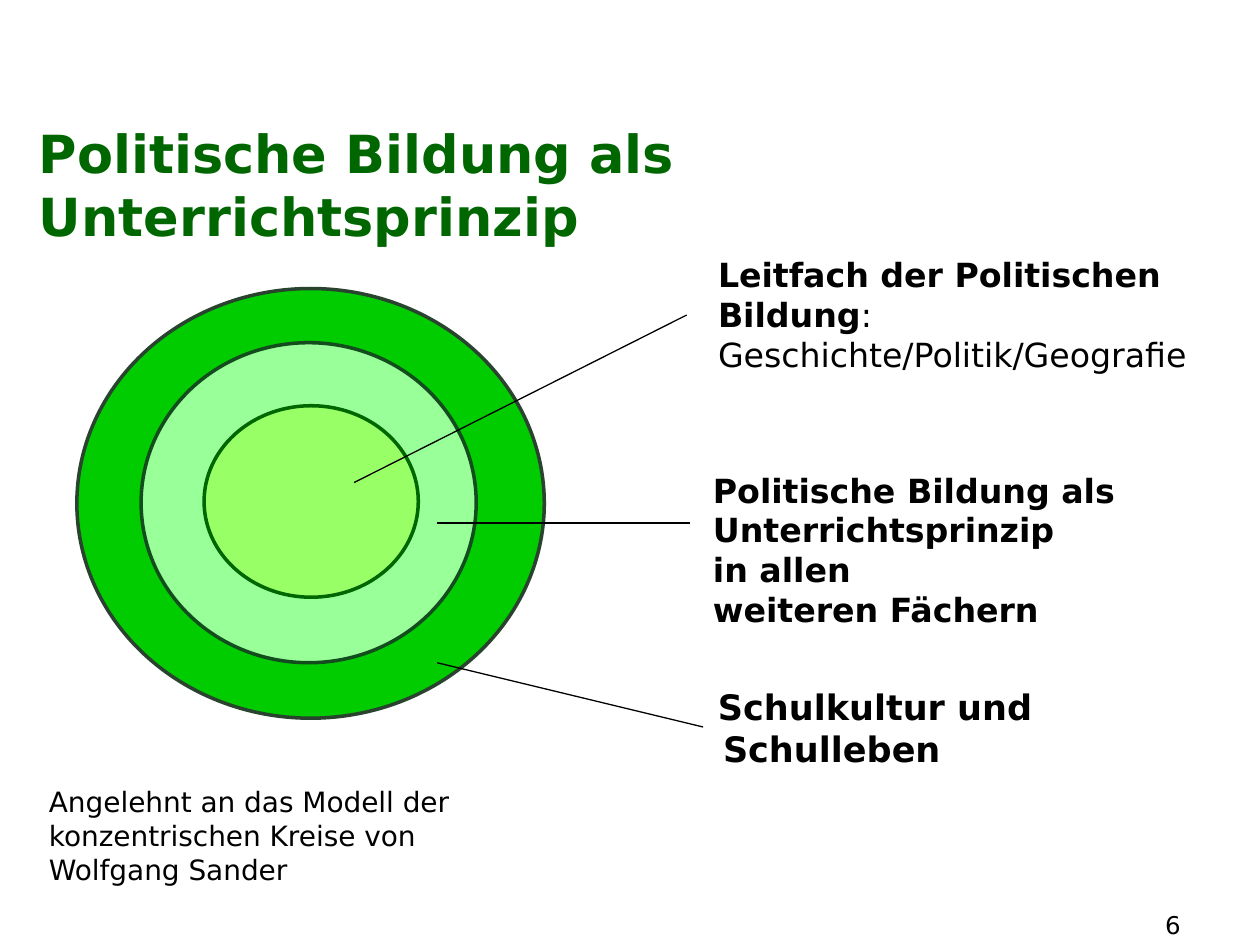
from lxml import etree
from pptx import Presentation
from pptx import util as u
from pptx.dml.color import RGBColor
from pptx.enum import shapes, text

THEME = {
    "font": "DejaVu Sans", "black": "000000", "green": "006600",
    "title": 30, "large": 20, "label": 19, "caption": 16, "number": 14,
    "ring_line": 2, "leader_line": 0.75,
}

# Rings from outside in: left, top, width, height, fill, line
RINGS = [
    (0.61, 2.29, 3.71, 3.41, "00CC00", "29432F"),
    (1.12, 2.72, 2.66, 2.54, "99FF99", "134D1E"),
    (1.62, 3.22, 1.70, 1.52, "99FF66", THEME["green"]),
]

# Leader lines: start in a ring, end at its label
LEADERS = [
    ((2.81, 3.83), (5.45, 2.50)),
    ((3.47, 4.15), (5.48, 4.15)),
    ((3.47, 5.26), (5.58, 5.77)),
]

# Texts: place, size, paragraphs of (words, bold) spans, then what differs
TEXTS = [
    {"at": (0.21, 0.87, 9.62, 0.82), "size": "title", "color": "green",
     "paras": [[("Politische Bildung als Unterrichtsprinzip", True)]],
     "frame": {"margin_top": u.Inches(0.09)}},
    {"at": (0.29, 6.18, 3.7, 0.95), "size": "caption",
     "paras": [[("Angelehnt an das Modell der konzentrischen Kreise von "
                 "Wolfgang Sander", False)]]},
    {"at": (7.2, 7.17, 2.27, 0.52), "size": "number",
     "paras": [[("6", False)]], "align": text.PP_ALIGN.RIGHT},
    {"at": (5.45, 1.97, 4.31, 1.06), "size": "label", "indent": (0.15, 0),
     "paras": [[("Leitfach der Politischen Bildung", True),
                (": Geschichte/Politik/Geografie", False)]]},
    {"at": (5.56, 3.68, 3.49, 1.38), "size": "label",
     "paras": [[(line, True)] for line in (
         "Politische Bildung als", "Unterrichtsprinzip",
         "in allen", "weiteren Fächern")],
     "frame": {"word_wrap": False}},
    {"at": (5.58, 5.39, 4.18, 0.77), "size": "large", "indent": (0.06, -0.04),
     "paras": [[("Schulkultur und Schulleben", True)]]},
]


def inches(values):
    return [u.Inches(value) for value in values]


def set_line(shape, color, width):
    shape.line.color.rgb = RGBColor.from_string(color)
    shape.line.width = u.Pt(width)


def add_ring(page, *ring):
    *place, fill, line = ring
    shape = page.shapes.add_shape(
        shapes.MSO_SHAPE.FLOWCHART_CONNECTOR, *inches(place))
    shape.shadow.inherit = False
    shape.fill.solid()
    shape.fill.fore_color.rgb = RGBColor.from_string(fill)
    set_line(shape, line, THEME["ring_line"])


def add_leader(page, start, end):
    leader = page.shapes.add_connector(
        shapes.MSO_CONNECTOR.STRAIGHT, *inches(start + end))
    set_line(leader, THEME["black"], THEME["leader_line"])
    properties = leader.line._get_or_add_ln().getparent()
    namespace = etree.QName(properties[0]).namespace
    etree.SubElement(properties, f"{{{namespace}}}effectLst")


def add_text(page, item):
    box = page.shapes.add_textbox(*inches(item["at"]))
    frame = box.text_frame
    frame_format = {"word_wrap": True, "vertical_anchor": text.MSO_ANCHOR.TOP,
                    **item.get("frame", {})}
    for name, value in frame_format.items():
        setattr(frame, name, value)
    for number, spans in enumerate(item["paras"]):
        para = frame.add_paragraph() if number else frame.paragraphs[0]
        para.alignment = item.get("align", text.PP_ALIGN.LEFT)
        if "indent" in item:
            margin, first = inches(item["indent"])
            layout = para._p.get_or_add_pPr()
            layout.set("marL", str(margin))
            layout.set("indent", str(first))
        for words, bold in spans:
            span = para.add_run()
            span.text = words
            font_format = {"name": THEME["font"], "bold": bold,
                           "size": u.Pt(THEME[item["size"]])}
            for name, value in font_format.items():
                setattr(span.font, name, value)
            color = THEME[item.get("color", "black")]
            span.font.color.rgb = RGBColor.from_string(color)


def main():
    deck = Presentation()
    deck.slide_width, deck.slide_height = inches((10, 7.5))
    page = deck.slides.add_slide(deck.slide_layouts[6])
    # Concentric circles, then their leader lines, then all wording
    for ring in RINGS:
        add_ring(page, *ring)
    for start, end in LEADERS:
        add_leader(page, start, end)
    for item in TEXTS:
        add_text(page, item)
    deck.save("out.pptx")


if __name__ == "__main__":
    main()
